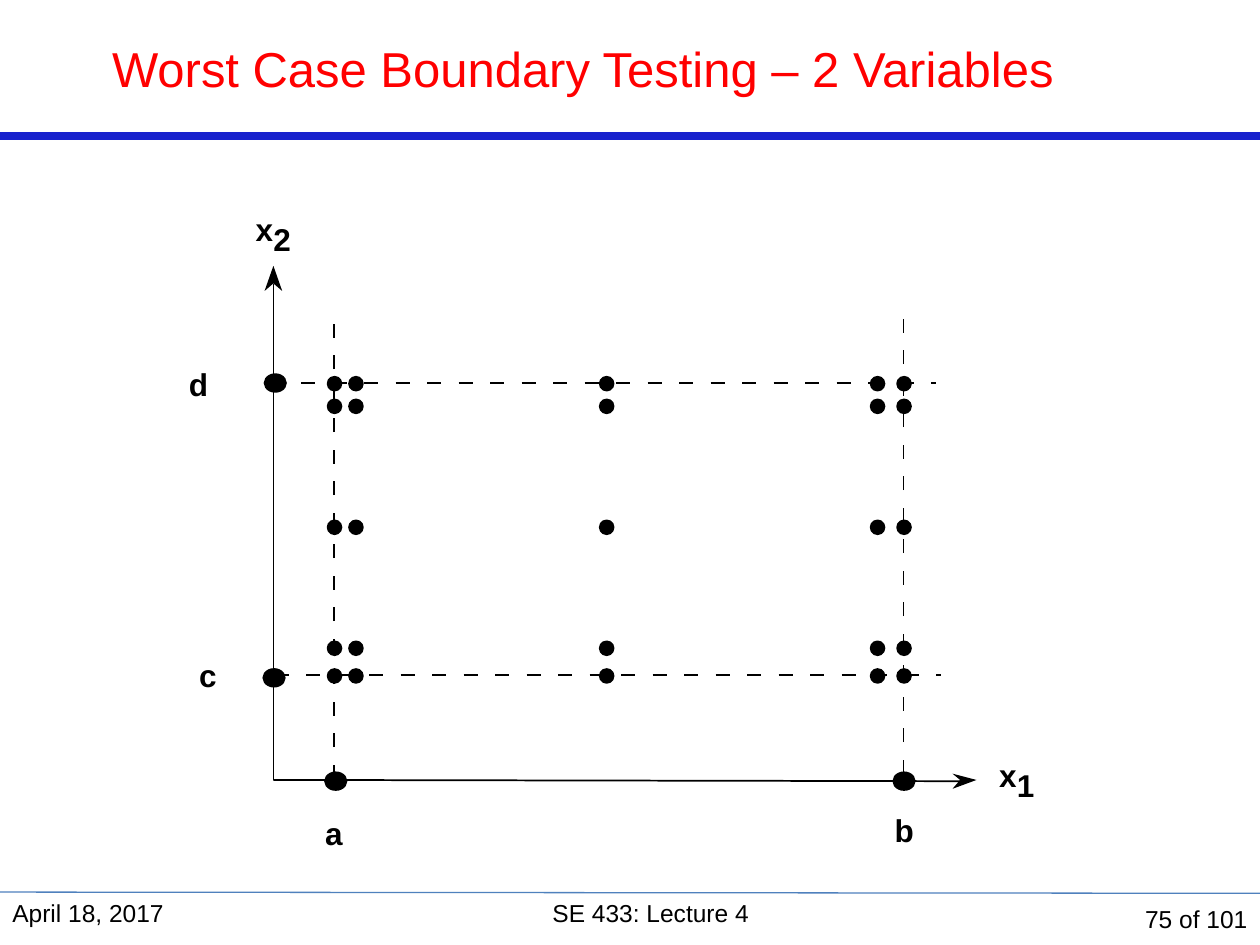
import math
from itertools import product

from lxml import etree
from pptx import Presentation
from pptx import util as u
from pptx.dml.color import RGBColor
from pptx.enum import shapes, text
from pptx.oxml.ns import qn

BLACK = RGBColor(0x00, 0x00, 0x00)
RED = RGBColor(0xFF, 0x00, 0x00)
RULE_BLUE = RGBColor(0x18, 0x22, 0xCD)
FOOTER_BLUE = RGBColor(0x4F, 0x81, 0xBD)
FONT = "Arial"
LEFT, CENTER, RIGHT = (text.PP_ALIGN.LEFT, text.PP_ALIGN.CENTER,
                       text.PP_ALIGN.RIGHT)
DASH, PITCH = 0.11, 0.25


def write(frame, words, size, color=BLACK, bold=False, align=LEFT):
    para = frame.paragraphs[0]
    para.alignment = align
    span = para.add_run()
    span.text = words
    formats = {"name": FONT, "size": u.Pt(size), "bold": bold}
    for name, value in formats.items():
        setattr(span.font, name, value)
    span.font.color.rgb = color


def add_line(page, start, end, color=BLACK, width=1):
    line = page.shapes.add_connector(
        shapes.MSO_CONNECTOR.STRAIGHT,
        *(u.Inches(value) for value in (*start, *end)))
    line.line.color.rgb = color
    line.line.width = u.Pt(width)
    etree.SubElement(line._element.spPr, qn("a:effectLst"))


def add_dot(page, left, top, width, height):
    dot = page.shapes.add_shape(
        shapes.MSO_SHAPE.OVAL,
        *(u.Inches(value) for value in (left, top, width, height)))
    dot.shadow.inherit = False
    dot.fill.solid()
    dot.fill.fore_color.rgb = BLACK
    dot.line.color.rgb = BLACK
    dot.line.width = u.Pt(1)


def add_arrowhead(page, points):
    corners = [(u.Inches(x), u.Inches(y)) for x, y in points]
    builder = page.shapes.build_freeform(*corners[0])
    builder.add_line_segments(corners[1:], close=True)
    head = builder.convert_to_shape()
    head.shadow.inherit = False
    head.fill.solid()
    head.fill.fore_color.rgb = BLACK
    head.line.fill.background()


def add_label(page, left, top, words):
    box = page.shapes.add_textbox(u.Inches(left), u.Inches(top),
                                  u.Inches(0.14), u.Inches(0.3))
    formats = {"margin_left": 0, "margin_right": 0, "margin_top": 0,
               "margin_bottom": 0, "word_wrap": False,
               "auto_size": text.MSO_AUTO_SIZE.SHAPE_TO_FIT_TEXT}
    for name, value in formats.items():
        setattr(box.text_frame, name, value)
    write(box.text_frame, words, 18, bold=True)


def add_dashes(page, start, end):
    """Draw evenly spaced dashes along a straight guide."""
    length = math.dist(start, end)

    def point(distance):
        share = min(distance / length, 1)
        return tuple(a + (b - a) * share for a, b in zip(start, end))

    for step in range(math.ceil(length / PITCH)):
        add_line(page, point(step * PITCH), point(step * PITCH + DASH))


def add_header(page, left, top, width, height):
    title = page.shapes.title
    places = {"left": left + 0.5, "top": top,
              "width": width - 1.75, "height": height}
    for name, value in places.items():
        setattr(title, name, u.Inches(value))
    title.text_frame.vertical_anchor = text.MSO_ANCHOR.MIDDLE
    write(title.text_frame, "Worst Case Boundary Testing – 2 Variables",
          28, RED, align=CENTER)
    base = top + height
    add_line(page, (left, base), (left + width, base), RULE_BLUE, 4.5)


def add_plot(page, left, top):
    def at(x, y):
        return left + x, top + y

    # Axes and arrowheads
    origin = at(0.67, 4.69)
    add_line(page, origin, at(6.12, 4.7))
    add_line(page, origin, at(0.67, 0.75))
    heads = (
        ((6.25, 4.69), (6.06, 4.76), (6.12, 4.69), (6.06, 4.64)),
        ((0.67, 0.61), (0.74, 0.81), (0.67, 0.75), (0.6, 0.81)),
    )
    for points in heads:
        add_arrowhead(page, [at(*point) for point in points])

    # Dashed guides at a, b, c and d
    guides = (
        ((1.15, 4.68), (1.15, 1.07)),
        ((5.67, 4.64), (5.67, 1.03)),
        ((0.68, 3.86), (5.97, 3.86)),
        ((0.64, 1.54), (5.93, 1.54)),
    )
    for start, end in guides:
        add_dashes(page, at(*start), at(*end))

    # Boundary marks on the axes
    for mark in ((1.08, 4.63), (5.59, 4.63), (0.59, 3.81), (0.6, 1.47)):
        add_dot(page, *at(*mark), 0.17, 0.14)

    # Test points: every pairing of the five values of each variable
    columns = (1.1, 1.27, 3.26, 5.41, 5.62)
    rows = (1.49, 1.67, 2.63, 3.59, 3.81)
    for x, y in product(columns, rows):
        add_dot(page, *at(x, y), 0.11, 0.11)

    # Boundary and axis labels
    labels = (
        ("a", 1.08, 4.96), ("b", 5.6, 4.94),
        ("c", 0.08, 3.71), ("d", 0, 1.4),
        ("x", 0.53, 0.17), ("2", 0.67, 0.25),
        ("x", 6.43, 4.5), ("1", 6.57, 4.58),
    )
    for words, x, y in labels:
        add_label(page, *at(x, y), words)


def add_footer(page, left, top, width, height):
    add_line(page, (left, top), (left + width, top + 0.01),
             FOOTER_BLUE, 0.75)
    parts = (
        ("April 18, 2017", 0, 2.17, LEFT, text.MSO_ANCHOR.TOP),
        ("SE 433: Lecture 4", 2.08, 6.17, CENTER, text.MSO_ANCHOR.TOP),
        ("75 of 101", 8.33, 1.67, RIGHT, text.MSO_ANCHOR.MIDDLE),
    )
    for words, offset, span_width, align, anchor in parts:
        box = page.shapes.add_textbox(
            u.Inches(left + offset), u.Inches(top),
            u.Inches(span_width), u.Inches(height))
        box.text_frame.word_wrap = True
        box.text_frame.vertical_anchor = anchor
        write(box.text_frame, words, 14, align=align)


def main():
    deck = Presentation()
    deck.slide_width, deck.slide_height = u.Inches(10), u.Inches(7.5)
    page = deck.slides.add_slide(deck.slide_layouts.get_by_name("Title Only"))
    add_header(page, 0, 0, 10, 1.08)
    add_plot(page, 1.5, 1.5)
    add_footer(page, 0, 7.08, 10, 0.42)
    deck.save("out.pptx")


if __name__ == "__main__":
    main()
